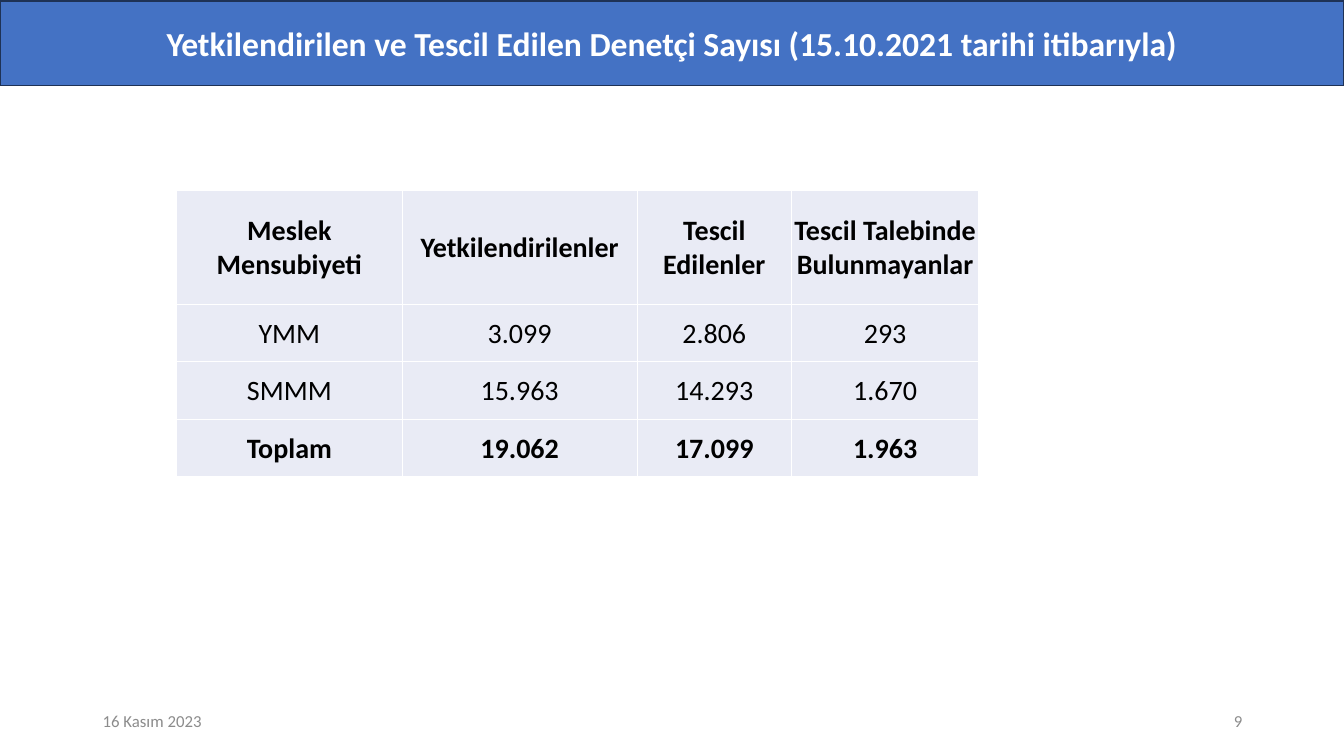
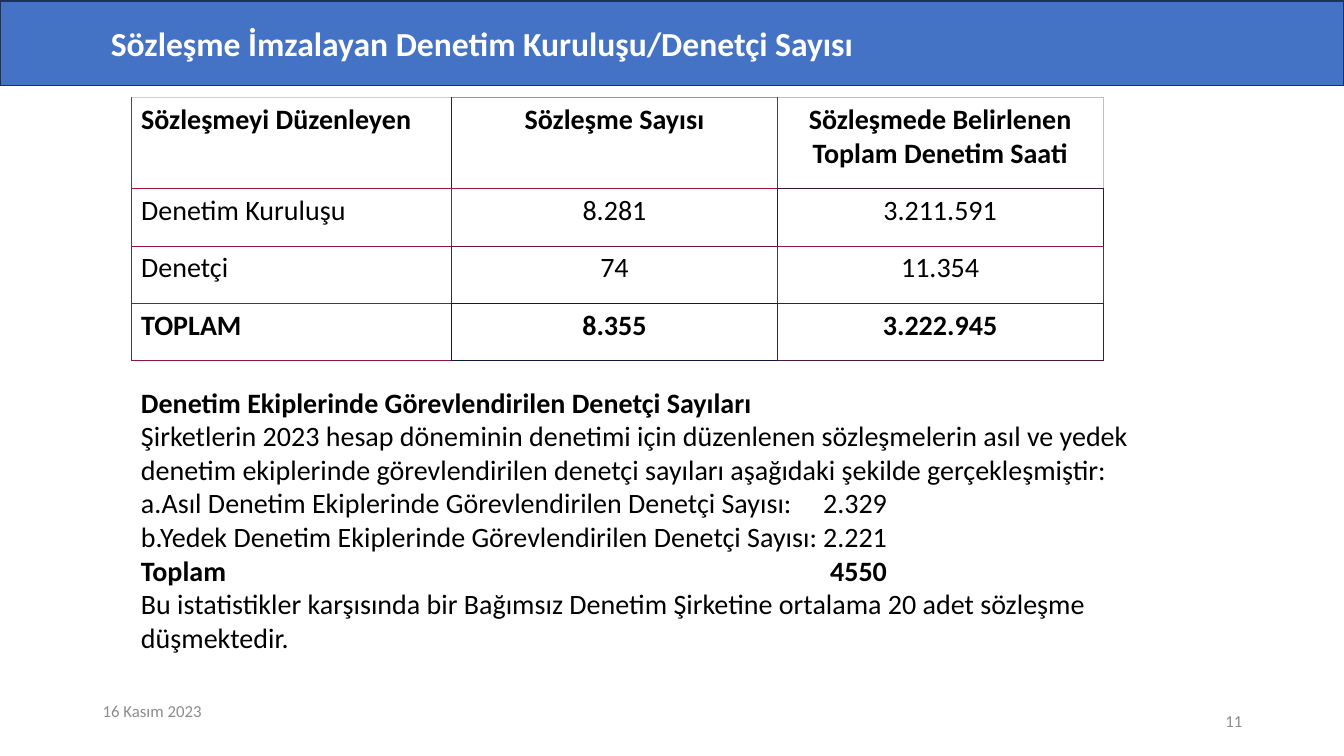
import pptx
import pptx.util
import pptx.dml.color
import pptx.enum.shapes
import pptx.enum.text
import pptx.oxml
import pptx.oxml.ns
from lxml import etree

Inches, Pt = pptx.util.Inches, pptx.util.Pt
ALIGN = pptx.enum.text.PP_ALIGN
ANCHOR = pptx.enum.text.MSO_ANCHOR
qn = pptx.oxml.ns.qn

# Shared style
FONT = "Calibri"
COLORS = {"band": "4472C4", "edge": "1E3256", "white": "FFFFFF",
          "text": "000000", "foot": "8C8C8C", "cell": "E9EBF5"}
DATE = "16 Kasım 2023"

# Content: auditors by profession
AUDIT = [
    ["Meslek Mensubiyeti", "Yetkilendirilenler", "Tescil Edilenler",
     "Tescil Talebinde Bulunmayanlar"],
    ["YMM", "3.099", "2.806", "293"],
    ["SMMM", "15.963", "14.293", "1.670"],
    ["Toplam", "19.062", "17.099", "1.963"],
]

# Content: contracts, with the colours of the grid lines
DEALS = [
    ["Sözleşmeyi Düzenleyen", "Sözleşme Sayısı",
     "Sözleşmede Belirlenen Toplam Denetim Saati"],
    ["Denetim Kuruluşu", "8.281", "3.211.591"],
    ["Denetçi", "74", "11.354"],
    ["TOPLAM", "8.355", "3.222.945"],
]
ACROSS = [
    ["D0C2FA", "10C7FA", "90CCFA"],
    ["A8153A", "A8153A", "38163A"],
    ["98133A", "68133A", "98133A"],
    ["90153A", "10173A", "48183A"],
    ["90153A", "10173A", "48183A"],
]
DOWN = [
    ["C0153A", "48153A", "A8153A", "90CCFA"],
    ["A8153A", "A8153A", "38163A", "38163A"],
    ["98133A", "68133A", "98133A", "98133A"],
    ["90153A", "10173A", "48183A", "48183A"],
]

# Text and whether it is bold
NOTES = [
    ("Denetim Ekiplerinde Görevlendirilen Denetçi Sayıları", True),
    ("Şirketlerin 2023 hesap döneminin denetimi için düzenlenen sözleşmelerin "
     "asıl ve yedek denetim ekiplerinde görevlendirilen denetçi sayıları "
     "aşağıdaki şekilde gerçekleşmiştir:", False),
    ("a.Asıl Denetim Ekiplerinde Görevlendirilen Denetçi Sayısı:\t2.329", False),
    ("b.Yedek Denetim Ekiplerinde Görevlendirilen Denetçi Sayısı:\t2.221", False),
    ("Toplam\t4550", True),
    ("Bu istatistikler karşısında bir Bağımsız Denetim Şirketine ortalama "
     "20 adet sözleşme düşmektedir.", False),
]


def rgb(code):
    return pptx.dml.color.RGBColor.from_string(code)


def style(para, size, color, bold=False, align=ALIGN.LEFT):
    font = para.font
    font.name, font.size, font.bold = FONT, Pt(size), bold
    font.color.rgb = rgb(color)
    para.alignment = align


def label(slide, text, left, top, align):
    box = slide.shapes.add_textbox(Inches(left), Inches(top), Inches(3), Inches(0.4))
    frame = box.text_frame
    frame.word_wrap = True
    frame.vertical_anchor = ANCHOR.MIDDLE
    frame.text = text
    style(frame.paragraphs[0], 12, COLORS["foot"], align=align)


def page(deck, title, number, align=ALIGN.CENTER, indent=0.1, date_top=6.95):
    """Add a slide with the title band and the footer."""
    slide = deck.slides.add_slide(deck.slide_layouts[6])
    label(slide, DATE, 0.92, date_top, ALIGN.LEFT)
    label(slide, number, 9.42, 6.95, ALIGN.RIGHT)
    band = slide.shapes.add_shape(pptx.enum.shapes.MSO_SHAPE.RECTANGLE, 0,
                                  Inches(0.01), deck.slide_width, Inches(0.84))
    band.shadow.inherit = False
    band.fill.solid()
    band.fill.fore_color.rgb = rgb(COLORS["band"])
    band.line.color.rgb = rgb(COLORS["edge"])
    band.line.width = Pt(1)
    frame = band.text_frame
    frame.word_wrap = True
    frame.margin_left = Inches(indent)
    frame.vertical_anchor = ANCHOR.MIDDLE
    frame.text = title
    style(frame.paragraphs[0], 24, COLORS["white"], True, align)
    return slide


def border(cell, sides, width):
    props = cell._tc.get_or_add_tcPr()
    for side, color in zip("LRTB", sides):
        line = etree.SubElement(props, qn("a:ln" + side), w=str(Pt(width)))
        fill = etree.SubElement(line, qn("a:solidFill"))
        etree.SubElement(fill, qn("a:srgbClr"), val=color)


def grid(slide, data, left, top, cols, rows, fill, across, down, width,
         first=ALIGN.CENTER, anchor=ANCHOR.TOP, inset=None):
    """Add a table whose first and last rows are bold."""
    table = slide.shapes.add_table(len(rows), len(cols), Inches(left), Inches(top),
                                   Inches(sum(cols)), Inches(sum(rows))).table
    table.first_row = table.horz_banding = False
    for c, size in enumerate(cols):
        table.columns[c].width = Inches(size)
    for r, size in enumerate(rows):
        table.rows[r].height = Inches(size)
        for c, text in enumerate(data[r]):
            cell = table.cell(r, c)
            border(cell, (down[r][c], down[r][c + 1],
                          across[r][c], across[r + 1][c]), width)
            cell.fill.solid()
            cell.fill.fore_color.rgb = rgb(fill)
            cell.vertical_anchor = anchor
            if inset is not None:
                cell.margin_left = cell.margin_right = cell.margin_top = Inches(inset)
                cell.margin_bottom = 0
            cell.text = text
            style(cell.text_frame.paragraphs[0], 20, COLORS["text"],
                  r in (0, len(rows) - 1), ALIGN.CENTER if c else first)


def notes(slide):
    box = slide.shapes.add_textbox(Inches(1.3), Inches(3.77),
                                   Inches(10.43), Inches(2.79))
    frame = box.text_frame
    frame.word_wrap = True
    for i, (text, bold) in enumerate(NOTES):
        para = frame.add_paragraph() if i else frame.paragraphs[0]
        para.add_run().text = text
        style(para, 20, COLORS["text"], bold)
        if "\t" in text:
            # Right tab lines up the figures
            tabs = pptx.oxml.ns.qn("a:tabLst")
            stops = etree.Element(tabs)
            etree.SubElement(stops, qn("a:tab"), pos=str(Inches(7.4)), algn="r")
            para._p.get_or_add_pPr().insert(0, stops)


def main():
    deck = pptx.Presentation()
    deck.slide_width, deck.slide_height = Inches(13.33), Inches(7.5)

    # Auditors
    slide = page(deck, "Yetkilendirilen ve Tescil Edilen Denetçi Sayısı "
                 "(15.10.2021 tarihi itibarıyla)", "9")
    white = [[COLORS["white"]] * 5] * 5
    grid(slide, AUDIT, 1.75, 1.89, [2.24, 2.33, 1.53, 1.86], [1.13] + [0.57] * 3,
         COLORS["cell"], white, white, 1, anchor=ANCHOR.MIDDLE, inset=0.01)

    # Contracts
    slide = page(deck, "Sözleşme İmzalayan Denetim Kuruluşu/Denetçi Sayısı", "11",
                 ALIGN.LEFT, 1.1, 6.85)
    grid(slide, DEALS, 1.3, 0.97, [3.18, 3.23, 3.23], [0.9] + [0.57] * 3,
         COLORS["white"], ACROSS, DOWN, 0.5, first=ALIGN.LEFT)
    notes(slide)

    deck.save("out.pptx")


if __name__ == "__main__":
    main()
